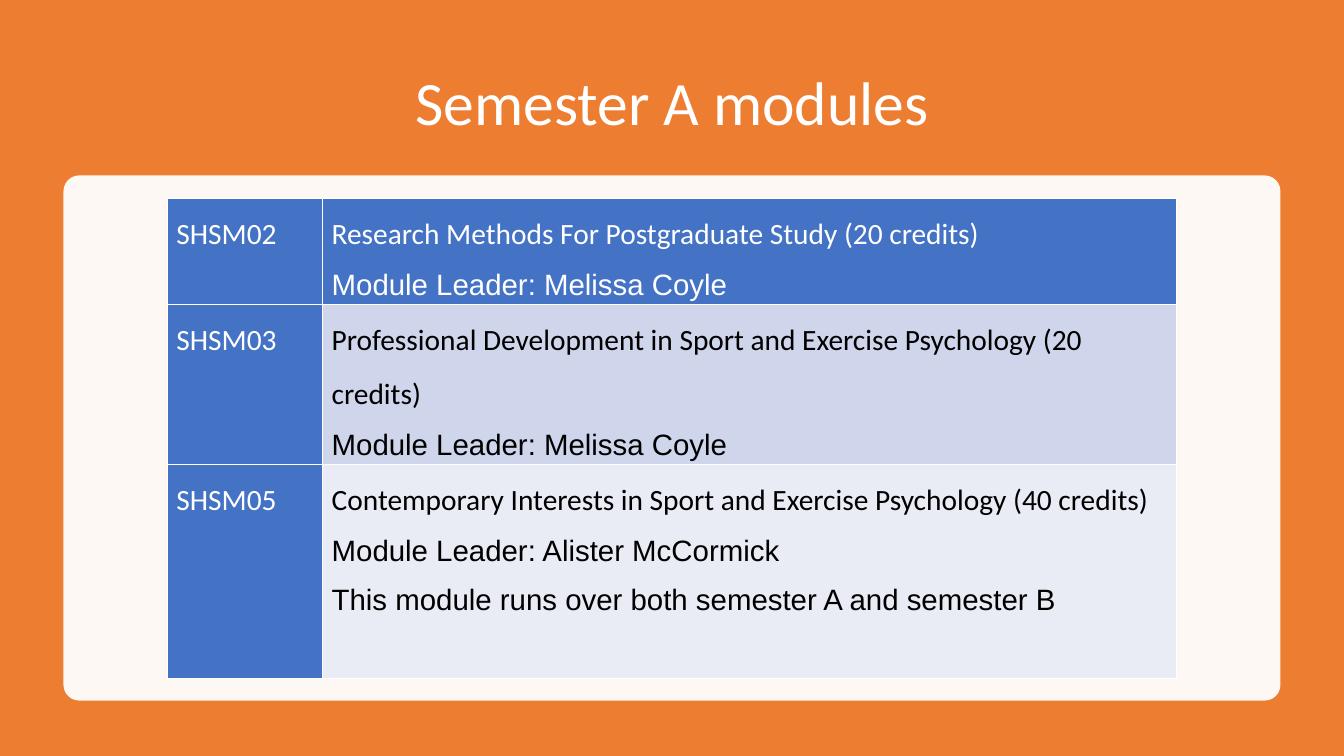
from lxml.etree import SubElement
from pptx import Presentation
from pptx.dml.color import RGBColor
from pptx.enum.shapes import MSO_SHAPE
from pptx.enum.text import MSO_ANCHOR, PP_ALIGN
from pptx.oxml.ns import qn
from pptx.util import Inches, Pt

COLORS = {
    "orange": "ED7D31", "white": "FFFFFF", "black": "000000",
    "blue": "4472C4", "band": "CFD5EA", "pale": "E9EBF5",
}
COLS = [1.54, 8.47]
# Code, row height, fill, text colour, lines
MODULES = [
    ("SHSM02", 1.05, "blue", "white", [
        "Research Methods For Postgraduate Study (20 credits)",
        "Module Leader: Melissa Coyle"]),
    ("SHSM03", 1.59, "band", "black", [
        "Professional Development in Sport and Exercise Psychology (20 credits)",
        "Module Leader: Melissa Coyle"]),
    ("SHSM05", 2.12, "pale", "black", [
        "Contemporary Interests in Sport and Exercise Psychology (40 credits)",
        "Module Leader: Alister McCormick",
        "This module runs over both semester A and semester B"]),
]


def paint(fill, color):
    fill.solid()
    fill.fore_color.rgb = RGBColor.from_string(COLORS[color])


def write(par, text, size=21, font="Calibri", color="white",
          align=PP_ALIGN.LEFT, space=1.5):
    par.alignment = align
    par.line_spacing = space
    run = par.add_run()
    run.text = text
    run.font.size = Pt(size)
    run.font.name = font
    run.font.color.rgb = RGBColor.from_string(COLORS[color])


def add_box(slide, kind, box, color, alpha=None):
    shape = slide.shapes.add_shape(kind, *map(Inches, box))
    shape.shadow.inherit = False
    paint(shape.fill, color)
    shape.line.fill.background()
    if alpha is not None:
        tint = shape.fill._xPr.find(".//" + qn("a:srgbClr"))
        SubElement(tint, qn("a:alpha"), val=str(alpha * 1000))
    return shape


def add_title(slide, text):
    box = slide.shapes.add_textbox(*map(Inches, (0.92, 0.5, 11.5, 1.1)))
    frame = box.text_frame
    frame.word_wrap = True
    frame.vertical_anchor = MSO_ANCHOR.MIDDLE
    write(frame.paragraphs[0], text, size=44, align=PP_ALIGN.CENTER, space=0.9)


def set_edges(cell, color, width):
    props = cell._tc.get_or_add_tcPr()
    for at, side in enumerate(("lnL", "lnR", "lnT", "lnB")):
        edge = SubElement(props, qn("a:" + side), w=str(Pt(width)))
        fill = SubElement(edge, qn("a:solidFill"))
        SubElement(fill, qn("a:srgbClr"), val=COLORS[color])
        props.insert(at, edge)  # borders come before the fill


def fill_cell(cell, lines, fill, color):
    cell.margin_left = cell.margin_right = Inches(0.09)
    cell.margin_top = cell.margin_bottom = 0
    paint(cell.fill, fill)
    set_edges(cell, "white", 1)
    frame = cell.text_frame
    for i, line in enumerate(lines):
        par = frame.add_paragraph() if i else frame.paragraphs[0]
        write(par, line, font="Arial" if i else "Calibri", color=color)


def add_modules(slide):
    high = sum(row[1] for row in MODULES)
    box = (1.66, 1.97, sum(COLS), high)
    table = slide.shapes.add_table(
        len(MODULES), len(COLS), *map(Inches, box)).table
    for col, width in zip(table.columns, COLS):
        col.width = Inches(width)
    for i, (code, height, fill, color, lines) in enumerate(MODULES):
        table.rows[i].height = Inches(height)
        fill_cell(table.cell(i, 0), [code], "blue", "white")
        fill_cell(table.cell(i, 1), lines, fill, color)


def main():
    deck = Presentation()
    deck.slide_width, deck.slide_height = Inches(13.33), Inches(7.5)
    slide = deck.slides.add_slide(deck.slide_layouts[6])

    # Backdrop and title
    add_box(slide, MSO_SHAPE.RECTANGLE, (0, 0, 13.33, 7.5), "orange")
    add_title(slide, "Semester A modules")

    # Panel with the module table
    panel = add_box(slide, MSO_SHAPE.ROUNDED_RECTANGLE,
                    (0.63, 1.74, 12.07, 5.21), "white", alpha=95)
    panel.adjustments[0] = 0.03
    add_modules(slide)

    deck.save("out.pptx")


if __name__ == "__main__":
    main()
